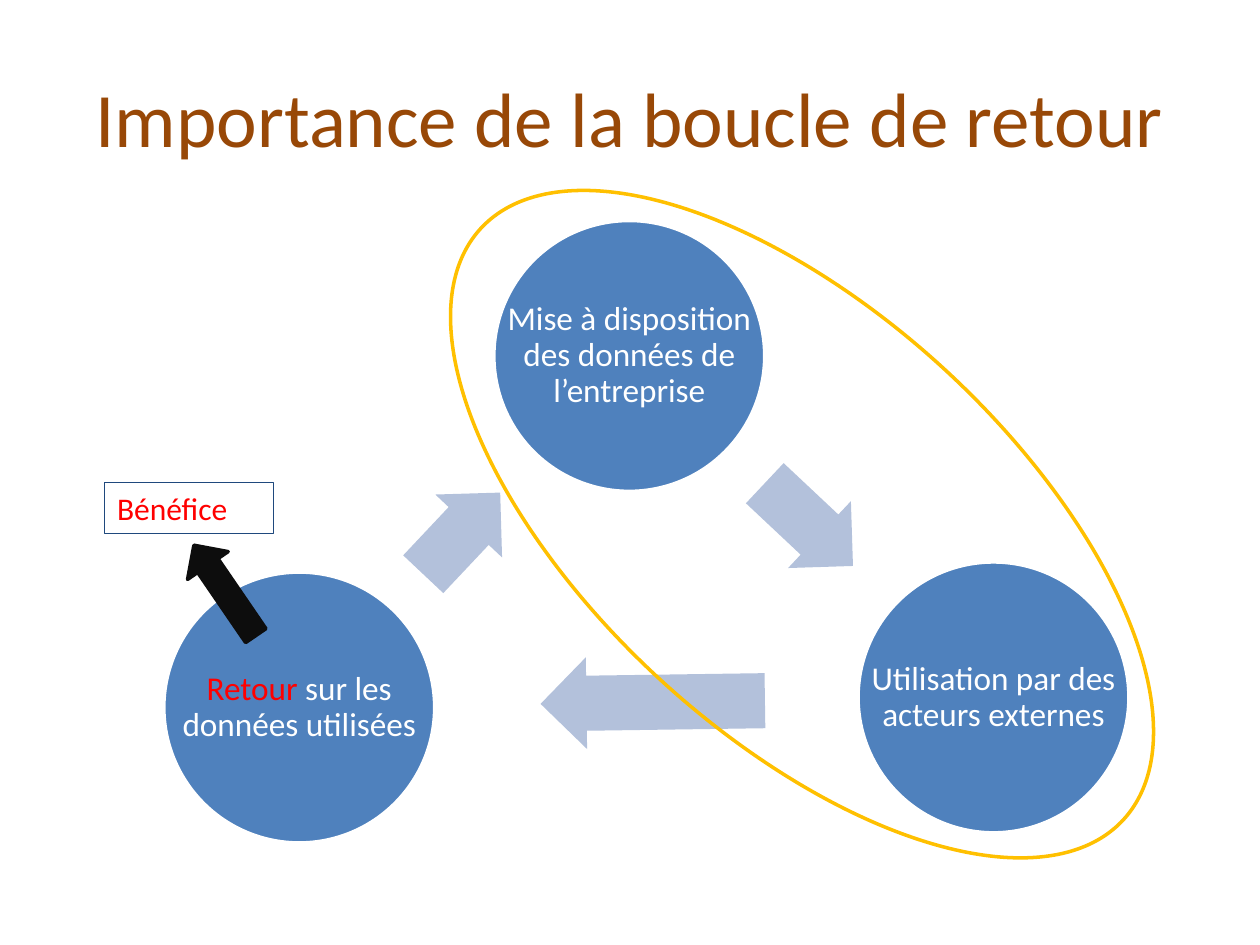
from pptx import Presentation
from pptx.dml.color import RGBColor
from pptx.enum.shapes import MSO_SHAPE as Shape
from pptx.enum.text import MSO_ANCHOR as Anchor, PP_ALIGN as Align
from pptx.util import Pt

FONT = "Calibri"
BROWN = RGBColor(0x98, 0x48, 0x07)
BLUE = RGBColor(0x4F, 0x81, 0xBD)
PALE_BLUE = RGBColor(0xB3, 0xC1, 0xDB)
NAVY = RGBColor(0x1F, 0x49, 0x7D)
GOLD = RGBColor(0xFF, 0xC0, 0x00)
RED = RGBColor(0xFF, 0x00, 0x00)
BLACK = RGBColor(0x0D, 0x0D, 0x0D)
WHITE = RGBColor(0xFF, 0xFF, 0xFF)

STEP_SIZE = 154.8
ARROW_HEIGHT = 52.4


def add_figure(slide, kind, box, fill=None, line=None, weight=2, rotation=0):
    figure = slide.shapes.add_shape(kind, *map(Pt, box))
    figure.shadow.inherit = False
    figure.rotation = rotation
    if fill is None:
        figure.fill.background()
    else:
        figure.fill.solid()
        figure.fill.fore_color.rgb = fill
    if line is None:
        figure.line.fill.background()
    else:
        figure.line.color.rgb = line
        figure.line.width = Pt(weight)
    return figure


def add_text(slide, box, runs, size, align=Align.CENTER, inset=(7.2, 3.6), spacing=None):
    """Write one paragraph of (wording, colour) runs, centred vertically in the box."""
    frame = slide.shapes.add_textbox(*map(Pt, box)).text_frame
    frame.word_wrap = True
    frame.vertical_anchor = Anchor.MIDDLE
    frame.margin_left = frame.margin_right = Pt(inset[0])
    frame.margin_top = frame.margin_bottom = Pt(inset[1])
    paragraph = frame.paragraphs[0]
    paragraph.alignment = align
    if spacing:
        paragraph.line_spacing = spacing
    for wording, colour in runs:
        run = paragraph.add_run()
        run.text = wording
        run.font.name = FONT
        run.font.size = Pt(size)
        run.font.color.rgb = colour


def add_step(slide, left, top, runs):
    box = (left, top, STEP_SIZE, STEP_SIZE)
    add_figure(slide, Shape.OVAL, box, BLUE, WHITE)
    add_text(slide, box, runs, 19, inset=(2.16, 2.16), spacing=0.9)


def add_loop_arrow(slide, left, top, width, rotation):
    arrow = add_figure(slide, Shape.RIGHT_ARROW, (left, top, width, ARROW_HEIGHT),
                       PALE_BLUE, rotation=rotation)
    arrow.adjustments[0] = 0.6
    arrow.adjustments[1] = 0.5


def add_loop(slide, box):
    """Three steps joined by arrows into a cycle."""
    left, top = box[:2]
    steps = [
        (188.6, 0, [("Mise à disposition des données de l’entreprise", WHITE)]),
        (396.7, 195.1, [("Utilisation par des acteurs externes", WHITE)]),
        (0, 200.9, [("Retour", RED), (" sur les données utilisées", WHITE)]),
    ]
    arrows = [(334.1, 147.6, 69.1, 43.2),
              (215.3, 249.1, 128.2, 179.2),
              (138.2, 152.6, 64.1, 313.3)]
    for (x, y, runs), (arrow_x, arrow_y, width, rotation) in zip(steps, arrows):
        add_step(slide, left + x, top + y, runs)
        add_loop_arrow(slide, left + arrow_x, top + arrow_y, width, rotation)


def add_benefit(slide, box):
    """Framed label with the arrow that rises to it from the return step."""
    left, top = box[:2]
    add_figure(slide, Shape.RIGHT_ARROW, (left + 37.4, top + 47.5, 62.6, 28.1),
               BLACK, BLACK, rotation=235.6)
    add_figure(slide, Shape.RECTANGLE, box, line=NAVY, weight=0.75)
    add_text(slide, box, [("Bénéfice", RED)], 18, Align.LEFT)


def main():
    deck = Presentation()
    deck.slide_width, deck.slide_height = Pt(720), Pt(540)
    slide = deck.slides.add_slide(deck.slide_layouts[6])

    # Title
    add_text(slide, (36, 21.6, 648, 90), [("Importance de la boucle de retour", BROWN)], 44)
    # Feedback loop
    add_loop(slide, (93.6, 126, 551.5, 355.7))
    # Ring around the first two steps
    add_figure(slide, Shape.OVAL, (208.8, 179.3, 499, 240.5), line=GOLD, rotation=42.6)
    # Benefit of the return
    add_benefit(slide, (59.8, 275.8, 96.5, 29))

    deck.save("out.pptx")


if __name__ == "__main__":
    main()
